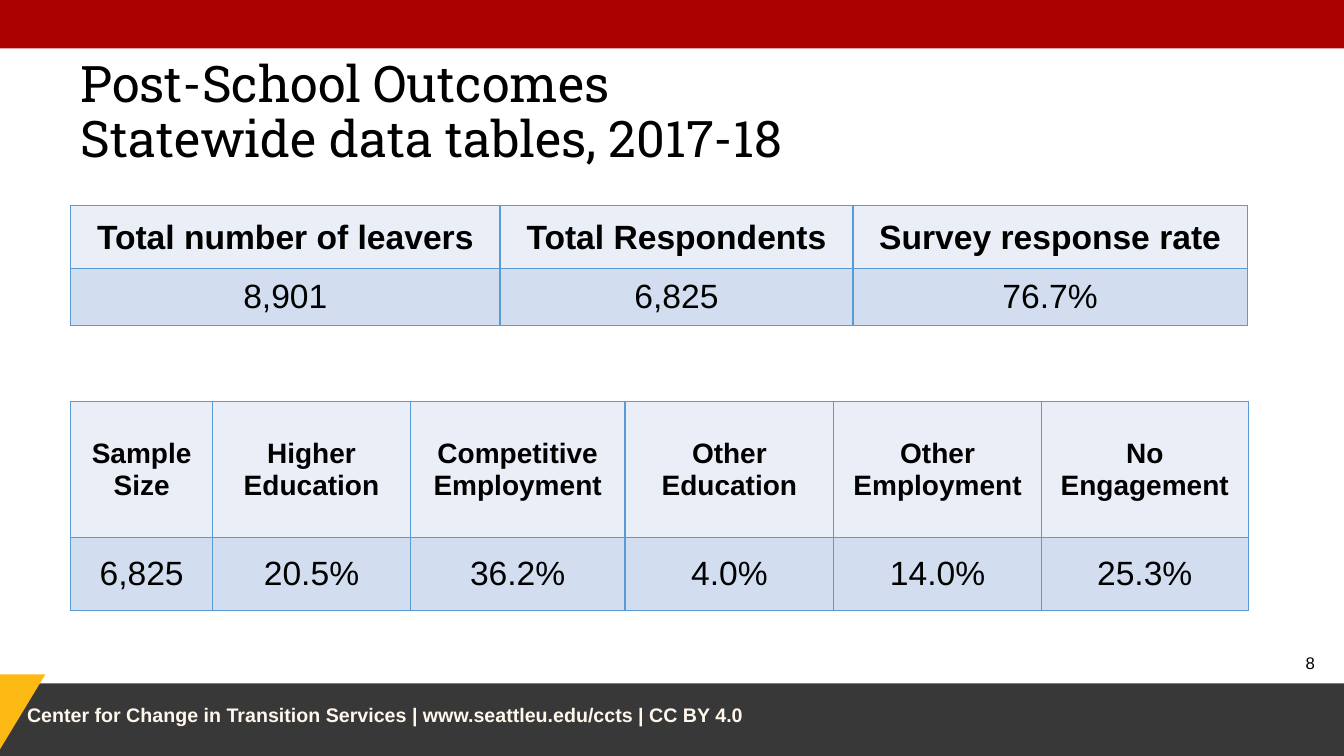
from pptx import Presentation
from pptx.dml.color import RGBColor
from pptx.enum import shapes, text
from pptx.oxml import parse_xml
from pptx.oxml.ns import nsdecls
from pptx.util import Inches, Pt

MID = text.MSO_ANCHOR.MIDDLE
LEFT, MIDDLE, RIGHT = text.PP_ALIGN.LEFT, text.PP_ALIGN.CENTER, text.PP_ALIGN.RIGHT


def rgb(code):
    return RGBColor.from_string(code)


def style(para, size, color="000000", bold=False, align=LEFT, face="Arial"):
    para.alignment = align
    font = para.font
    font.name, font.size, font.bold = face, Pt(size), bold
    font.color.rgb = rgb(color)


deck = Presentation()
deck.slide_width, deck.slide_height = Inches(13.33), Inches(7.5)
slide = deck.slides.add_slide(deck.slide_layouts[5])

# Top band, footer band and yellow corner
kind = shapes.MSO_SHAPE
for form, box, color in [
    (kind.RECTANGLE, (0, -0.01, 13.33, 0.49), "AA0000"),
    (kind.RECTANGLE, (0, 6.78, 13.33, 0.77), "393839"),
    (kind.RIGHT_TRIANGLE, (-0.01, 6.69, 0.46, 0.76), "FDB913"),
]:
    part = slide.shapes.add_shape(form, *map(Inches, box))
    part.shadow.inherit = False
    part.fill.solid()
    part.fill.fore_color.rgb = rgb(color)
    part.line.fill.background()
part.rotation = 180
part._element.spPr.xfrm.set("flipH", "1")

# Title
title = slide.shapes.title
title.left, title.top = Inches(0.7), Inches(0.54)
title.width, title.height = Inches(11.71), Inches(1.18)
frame = title.text_frame
frame.vertical_anchor = MID
para = frame.paragraphs[0]
para.add_run().text = "Post-School Outcomes"
para.add_line_break()
para.add_run().text = "Statewide data tables, 2017-18"
para.line_spacing = 0.9
style(para, 36, face="Roboto Slab")

# Footer credit and page number
for words, box, size, color, bold, align in [
    ("Center for Change in Transition Services | www.seattleu.edu/ccts | CC BY 4.0",
     (0.17, 6.92, 7.4, 0.34), 14, "FFF7EC", True, LEFT),
    ("8", (12.67, 6.38, 0.47, 0.4), 12, "000000", False, RIGHT),
]:
    frame = slide.shapes.add_textbox(*map(Inches, box)).text_frame
    frame.word_wrap = True
    frame.vertical_anchor = MID
    frame.text = words
    style(frame.paragraphs[0], size, color, bold, align)

# Tables: top, column widths, then per row: height, size, spacing, margins, words
thin = (0.01, 0.01, 0.01, 0)
tables = [
    (2.04, (4.26, 3.5, 3.91), [
        (0.62, 24, 1.07, (0.07, 0, 0.07, 0),
         ("Total number of leavers", "Total Respondents", "Survey response rate")),
        (0.57, 24, 1, thin, ("8,901", "6,825", "76.7%")),
    ]),
    (3.98, (1.41, 1.96, 2.13, 2.07, 2.06, 2.05), [
        (1.35, 20, 1, thin,
         ("Sample Size", "Higher Education", "Competitive Employment",
          "Other Education", "Other Employment", "No Engagement")),
        (0.73, 24, 1, (0.05,) * 4,
         ("6,825", "20.5%", "36.2%", "4.0%", "14.0%", "25.3%")),
    ]),
]
for top, widths, rows in tables:
    high = sum(row[0] for row in rows)
    grid = slide.shapes.add_table(len(rows), len(widths), Inches(0.7), Inches(top),
                                  Inches(sum(widths)), Inches(high)).table
    for col, width in zip(grid.columns, widths):
        col.width = Inches(width)
    for r, (height, size, space, pad, words) in enumerate(rows):
        grid.rows[r].height = Inches(height)
        for c, word in enumerate(words):
            cell = grid.cell(r, c)
            cell.text = word
            cell.vertical_anchor = MID
            (cell.margin_left, cell.margin_top,
             cell.margin_right, cell.margin_bottom) = map(Inches, pad)
            para = cell.text_frame.paragraphs[0]
            para.line_spacing = space
            style(para, size, bold=r == 0, align=MIDDLE)
            # Borders go before the fill
            for side in ("lnL", "lnR", "lnT", "lnB"):
                cell._tc.get_or_add_tcPr().append(parse_xml(
                    f'<a:{side} {nsdecls("a")} w="12700"><a:solidFill>'
                    f'<a:srgbClr val="5B9BD5"/></a:solidFill></a:{side}>'))
            cell.fill.solid()
            cell.fill.fore_color.rgb = rgb("D2DEEF" if r else "EAEFF7")

deck.save("out.pptx")
